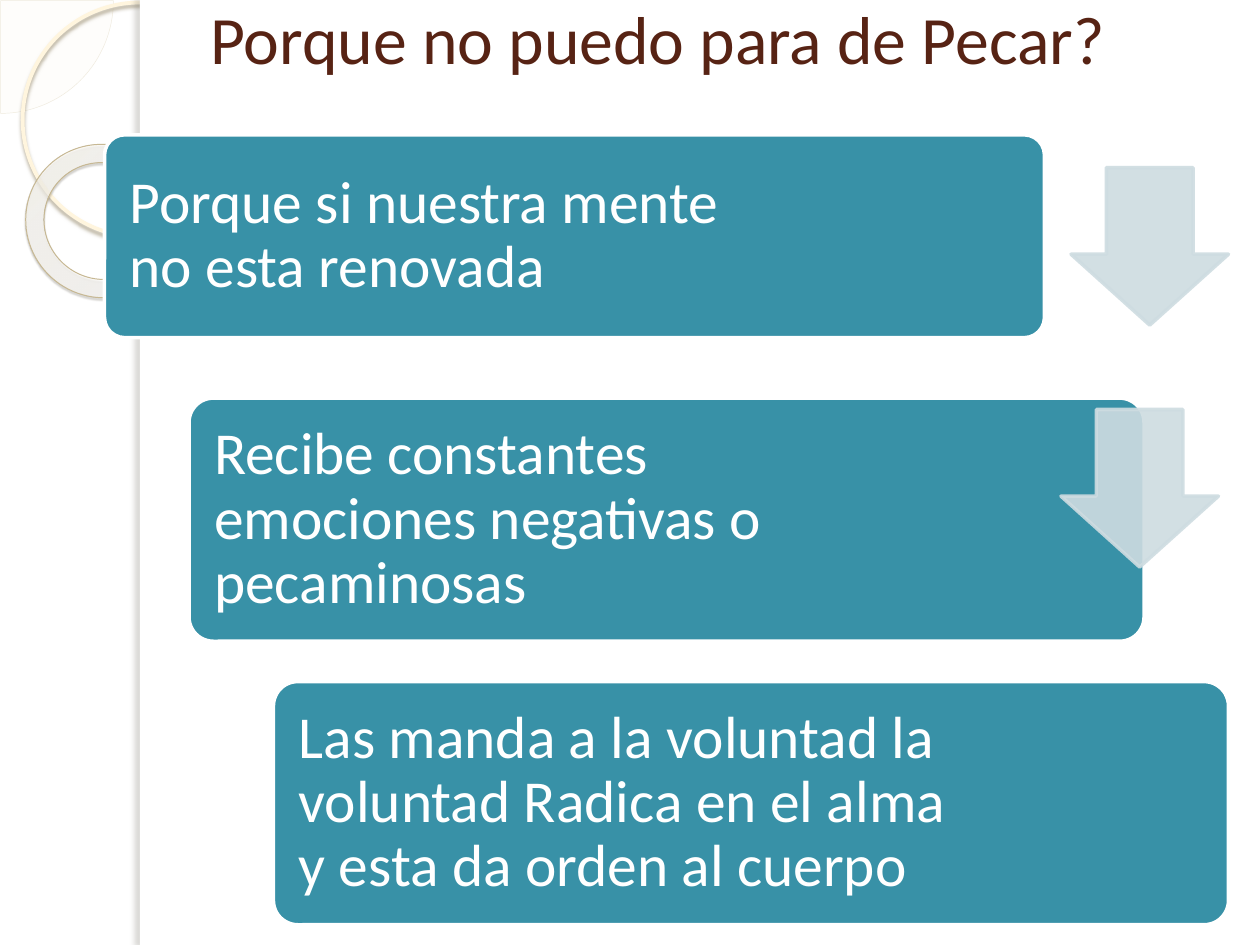
from pptx import Presentation
from pptx.dml.color import RGBColor
from pptx.enum.shapes import MSO_SHAPE as Preset
from pptx.enum.text import MSO_ANCHOR as Anchor, MSO_AUTO_SIZE as AutoSize, PP_ALIGN as Align
from pptx.oxml import parse_xml
from pptx.oxml.ns import nsdecls, qn
from pptx.util import Inches, Pt


def rgb(value):
    return RGBColor.from_string(value)


def color_xml(value, percent):
    return (f'<a:srgbClr {nsdecls("a")} val="{value}">'
            f'<a:alpha val="{percent * 1000}"/></a:srgbClr>')


class SlideBuilder:
    font = "Calibri"
    teal = "3891A7"
    white = "FFFFFF"
    brown = "572314"
    pale = "CEDCE1"

    def __init__(self, presentation):
        self.slide = presentation.slides.add_slide(presentation.slide_layouts[5])

    def place(self, box):
        return [Inches(length) for length in box]

    def shape(self, preset, box, fill=None, line=None, width=1, adjustments=(), alpha=None):
        shape = self.slide.shapes.add_shape(preset, *self.place(box))
        shape.shadow.inherit = False
        for index, value in enumerate(adjustments):
            shape.adjustments[index] = value
        for target, color in ((shape.fill, fill), (shape.line.fill, line)):
            if color:
                target.solid()
                target.fore_color.rgb = rgb(color)
            else:
                target.background()
        if line:
            shape.line.width = Pt(width)
        if alpha:
            for solid in shape.element.spPr.iter(qn("a:solidFill")):
                solid.replace(solid[0], parse_xml(color_xml(solid[0].get("val"), alpha)))
        return shape

    def shadow(self, shape, color, alpha, blur, distance, angle):
        effects = shape.element.spPr.find(qn("a:effectLst"))
        effects.append(parse_xml(
            f'<a:outerShdw {nsdecls("a")} blurRad="{Pt(blur)}" dist="{Pt(distance)}" '
            f'dir="{angle * 60000}" algn="tl" rotWithShape="0">'
            f'{color_xml(color, alpha)}</a:outerShdw>'))

    def radial_fill(self, shape, stops, left, top, right, bottom):
        properties = shape.element.spPr
        stop_xml = "".join(f'<a:gs pos="{position * 1000}">{color_xml(color, alpha)}</a:gs>'
                           for position, color, alpha in stops)
        properties.replace(properties.find(qn("a:noFill")), parse_xml(
            f'<a:gradFill {nsdecls("a")} rotWithShape="1"><a:gsLst>{stop_xml}</a:gsLst>'
            f'<a:path path="circle"><a:fillToRect l="{left * 1000}" t="{top * 1000}" '
            f'r="{right * 1000}" b="{bottom * 1000}"/></a:path></a:gradFill>'))

    def format_text(self, frame, text, size, color, anchor):
        frame.word_wrap = True
        frame.auto_size = AutoSize.NONE
        frame.vertical_anchor = anchor
        paragraph = frame.paragraphs[0]
        paragraph.text = text
        paragraph.alignment = Align.LEFT
        paragraph.font.name = self.font
        paragraph.font.size = Pt(size)
        paragraph.font.color.rgb = rgb(color)
        return paragraph

    def decoration(self):
        self.shape(Preset.PIE, (-0.89, -0.89, 1.79, 1.79), "FEFAF4", "D3C39F", 0.25,
                   (0, 54), alpha=33)
        circle = self.shape(Preset.OVAL, (0.18, 0.02, 1.86, 1.86), None, "FFF5DE", 2.15)
        self.shadow(circle, "B0A68F", 85, 2, 2, 90)
        ring = self.shape(Preset.DONUT, (0.2, 1.15, 1.23, 1.21), None, "C7B893", 0.58, (0.12,))
        ring.rotation = 38.6
        self.radial_fill(ring, [(0, "FFFCF6", 70), (70, "FFFEFB", 55), (100, "F0D28E", 60)],
                         -408, -50, 508, 150)
        self.shadow(ring, "5A5444", 35, 1, 1.2, 75)
        self.shape(Preset.RECTANGLE, (1.11, 0, 8.89, 7.5), self.white)
        edge = self.shape(Preset.RECTANGLE, (1.11, 0, 0.08, 7.5), self.white)
        self.shadow(edge, "736F63", 25, 3, 3, 180)

    def title(self, text, box):
        title = self.slide.shapes.title
        title.left, title.top, title.width, title.height = self.place(box)
        self.format_text(title.text_frame, text, 38.7, self.brown, Anchor.BOTTOM)
        title.element.getparent().append(title.element)

    def step(self, text, box):
        self.shape(Preset.ROUNDED_RECTANGLE, box, self.teal, self.white, 2, (0.1,))
        left, top, width, height = box
        inset = 0.06
        label_box = (left + inset, top + inset, width - 2.03, height - 2 * inset)
        label = self.slide.shapes.add_textbox(*self.place(label_box))
        frame = label.text_frame
        frame.margin_left = frame.margin_right = Inches(0.14)
        frame.margin_top = frame.margin_bottom = Inches(0.14)
        paragraph = self.format_text(frame, text, 34, self.white, Anchor.MIDDLE)
        paragraph.line_spacing = 0.9
        paragraph.space_after = Pt(12)

    def arrow(self, left, top):
        self.shape(Preset.DOWN_ARROW, (left, top, 1.25, 1.25), self.pale, self.pale, 2,
                   (0.55, 0.45), alpha=90)


def main():
    presentation = Presentation()
    presentation.slide_width = Inches(10)
    presentation.slide_height = Inches(7.5)
    builder = SlideBuilder(presentation)
    builder.decoration()
    builder.title("Porque no puedo para de Pecar?", (1.57, 0, 8.1, 0.67))
    steps = [
        ("Porque si nuestra mente no esta renovada", (0.83, 1.07, 7.46, 1.61)),
        ("Recibe constantes emociones negativas o pecaminosas", (1.5, 3.16, 7.58, 1.93)),
        ("Las manda a la voluntad la voluntad Radica en el alma y esta da orden al cuerpo",
         (2.17, 5.41, 7.58, 1.93)),
    ]
    for text, box in steps:
        builder.step(text, box)
    for left, top in ((8.5, 1.33), (8.42, 3.25)):
        builder.arrow(left, top)
    presentation.save("out.pptx")


if __name__ == "__main__":
    main()
